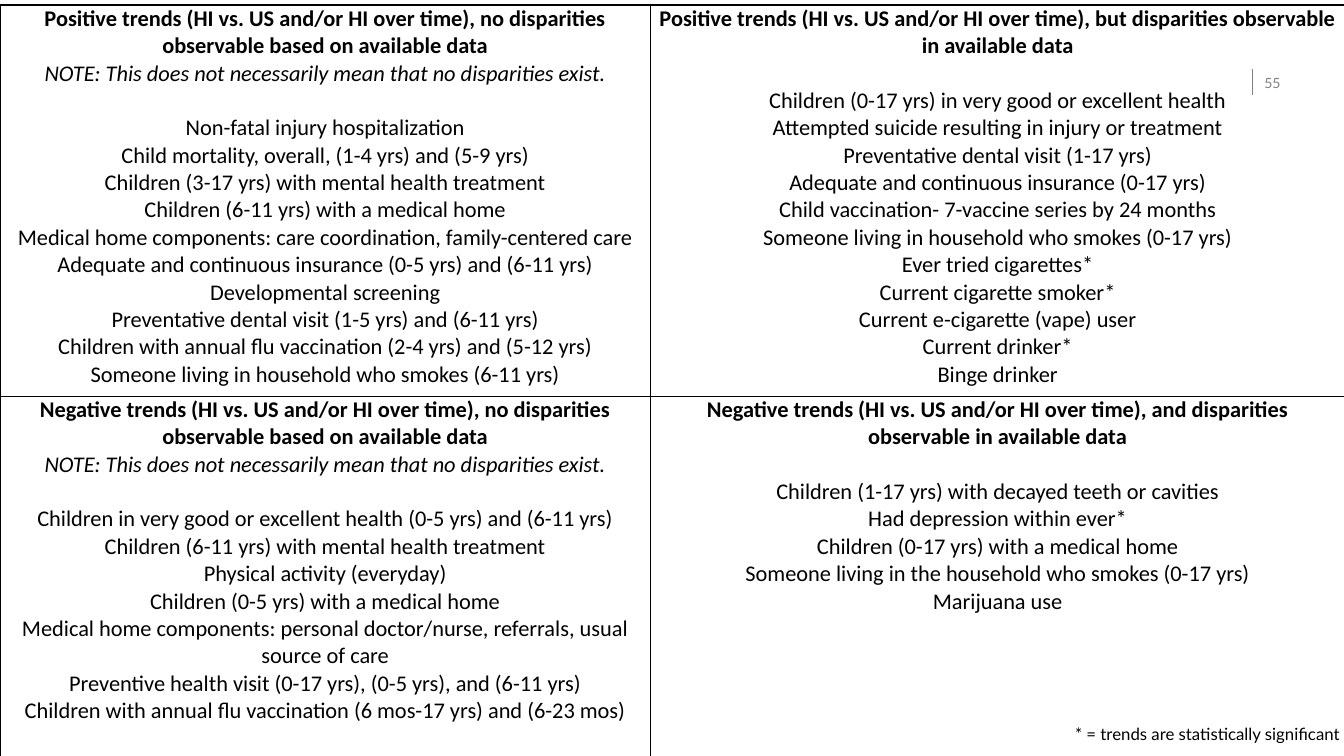
from lxml import etree
from pptx import Presentation
from pptx.dml.color import RGBColor
from pptx.enum.shapes import MSO_CONNECTOR as CONNECTOR
from pptx.enum.text import MSO_ANCHOR as ANCHOR, PP_ALIGN as ALIGN
from pptx.oxml import parse_xml
from pptx.oxml.ns import nsdecls, qn
from pptx.util import Inches, Pt

WIDTH, HEIGHT = 13.33, 7.5
COLUMNS = (6.45, 6.89)
ROWS = (3.88, 3.63)
BODY_FONT, ACCENT_FONT = "Calibri", "Lato"
BLACK, GREY = "000000", "808285"
LINE = 19.5  # height of one 16 pt line, in points

NO_DISPARITIES = "no disparities observable based on available data"
CAUTION = "NOTE: This does not necessarily mean that no disparities exist."
FOOTNOTE = "* = trends are statistically significant"

# Each quadrant: heading, caution, indicators, footnote
QUADRANTS = [
    [
        (f"Positive trends (HI vs. US and/or HI over time), {NO_DISPARITIES}", CAUTION, [
            "Non-fatal injury hospitalization",
            "Child mortality, overall, (1-4 yrs) and (5-9 yrs)",
            "Children (3-17 yrs) with mental health treatment",
            "Children (6-11 yrs) with a medical home",
            "Medical home components: care coordination, family-centered care",
            "Adequate and continuous insurance (0-5 yrs) and (6-11 yrs)",
            "Developmental screening",
            "Preventative dental visit (1-5 yrs) and (6-11 yrs)",
            "Children with annual flu vaccination (2-4 yrs) and (5-12 yrs)",
            "Someone living in household who smokes (6-11 yrs)",
        ], None),
        ("Positive trends (HI vs. US and/or HI over time), but disparities observable "
         "in available data", None, [
            "Children (0-17 yrs) in very good or excellent health",
            "Attempted suicide resulting in injury or treatment",
            "Preventative dental visit (1-17 yrs)",
            "Adequate and continuous insurance (0-17 yrs)",
            "Child vaccination- 7-vaccine series by 24 months",
            "Someone living in household who smokes (0-17 yrs)",
            "Ever tried cigarettes*",
            "Current cigarette smoker*",
            "Current e-cigarette (vape) user",
            "Current drinker*",
            "Binge drinker",
        ], None),
    ],
    [
        (f"Negative trends (HI vs. US and/or HI over time), {NO_DISPARITIES}", CAUTION, [
            "Children in very good or excellent health (0-5 yrs) and (6-11 yrs)",
            "Children (6-11 yrs) with mental health treatment",
            "Physical activity (everyday)",
            "Children (0-5 yrs) with a medical home",
            "Medical home components: personal doctor/nurse, referrals, usual source of care",
            "Preventive health visit (0-17 yrs), (0-5 yrs), and (6-11 yrs)",
            "Children with annual flu vaccination (6 mos-17 yrs) and (6-23 mos)",
        ], None),
        ("Negative trends (HI vs. US and/or HI over time), and disparities observable "
         "in available data", None, [
            "Children (1-17 yrs) with decayed teeth or cavities",
            "Had depression within ever*",
            "Children (0-17 yrs) with a medical home",
            "Someone living in the household who smokes (0-17 yrs)",
            "Marijuana use",
        ], FOOTNOTE),
    ],
]


def color(value):
    return RGBColor.from_string(value)


def set_margins(target, side, top):
    target.margin_left = target.margin_right = Inches(side)
    target.margin_top = target.margin_bottom = Inches(top)


def write(paragraph, text, size=16, name=BODY_FONT, ink=BLACK, bold=False,
          italic=False, align=ALIGN.CENTER, lines_before=0):
    paragraph.text = text
    paragraph.alignment = align
    paragraph.space_before = Pt(lines_before * LINE)
    font = paragraph.font
    font.size, font.name = Pt(size), name
    font.bold, font.italic = bold, italic
    font.color.rgb = color(ink)


def add_borders(cell):
    properties = cell._tc.get_or_add_tcPr()
    for side in ("lnL", "lnR", "lnT", "lnB"):
        properties.append(parse_xml(
            f'<a:{side} {nsdecls("a")} w="{Pt(1)}"><a:solidFill>'
            f'<a:srgbClr val="{BLACK}"/></a:solidFill></a:{side}>'))


def fill_quadrant(cell, heading, caution, indicators, footnote):
    set_margins(cell, 0.05, 0)
    add_borders(cell)
    cell.fill.background()
    frame = cell.text_frame
    write(frame.paragraphs[0], heading, bold=True)
    if caution:
        write(frame.add_paragraph(), caution, italic=True)
    for index, indicator in enumerate(indicators):
        write(frame.add_paragraph(), indicator, lines_before=int(index == 0))
    if footnote:
        write(frame.add_paragraph(), footnote, size=12, name=ACCENT_FONT,
              align=ALIGN.RIGHT, lines_before=4)


def add_trend_table(slide):
    table = slide.shapes.add_table(
        len(ROWS), len(COLUMNS), 0, Inches(0.05),
        Inches(sum(COLUMNS)), Inches(sum(ROWS))).table
    table.first_row = table.horz_banding = False
    for column, width in zip(table.columns, COLUMNS):
        column.width = Inches(width)
    for row, height, quadrants in zip(table.rows, ROWS, QUADRANTS):
        row.height = Inches(height)
        for cell, quadrant in zip(row.cells, quadrants):
            fill_quadrant(cell, *quadrant)


def add_page_rule(slide, x, top, bottom):
    rule = slide.shapes.add_connector(
        CONNECTOR.STRAIGHT, Inches(x), Inches(top), Inches(x), Inches(bottom))
    rule.line.color.rgb = color(GREY)
    rule.line.width = Pt(1)
    etree.SubElement(rule._element.spPr, qn("a:effectLst"))


def add_page_number(slide, number, *box):
    frame = slide.shapes.add_textbox(*map(Inches, box)).text_frame
    frame.word_wrap = True
    frame.vertical_anchor = ANCHOR.MIDDLE
    set_margins(frame, 0, 0.05)
    write(frame.paragraphs[0], number, size=10, name=ACCENT_FONT, ink=GREY,
          align=ALIGN.LEFT)


def main():
    deck = Presentation()
    deck.slide_width, deck.slide_height = Inches(WIDTH), Inches(HEIGHT)
    slide = deck.slides.add_slide(deck.slide_layouts[6])

    # Page marker, then the four quadrants of trends
    add_page_rule(slide, 12.42, 0.68, 0.94)
    add_page_number(slide, "55", 12.54, 0.62, 0.33, 0.4)
    add_trend_table(slide)

    deck.save("out.pptx")


if __name__ == "__main__":
    main()
